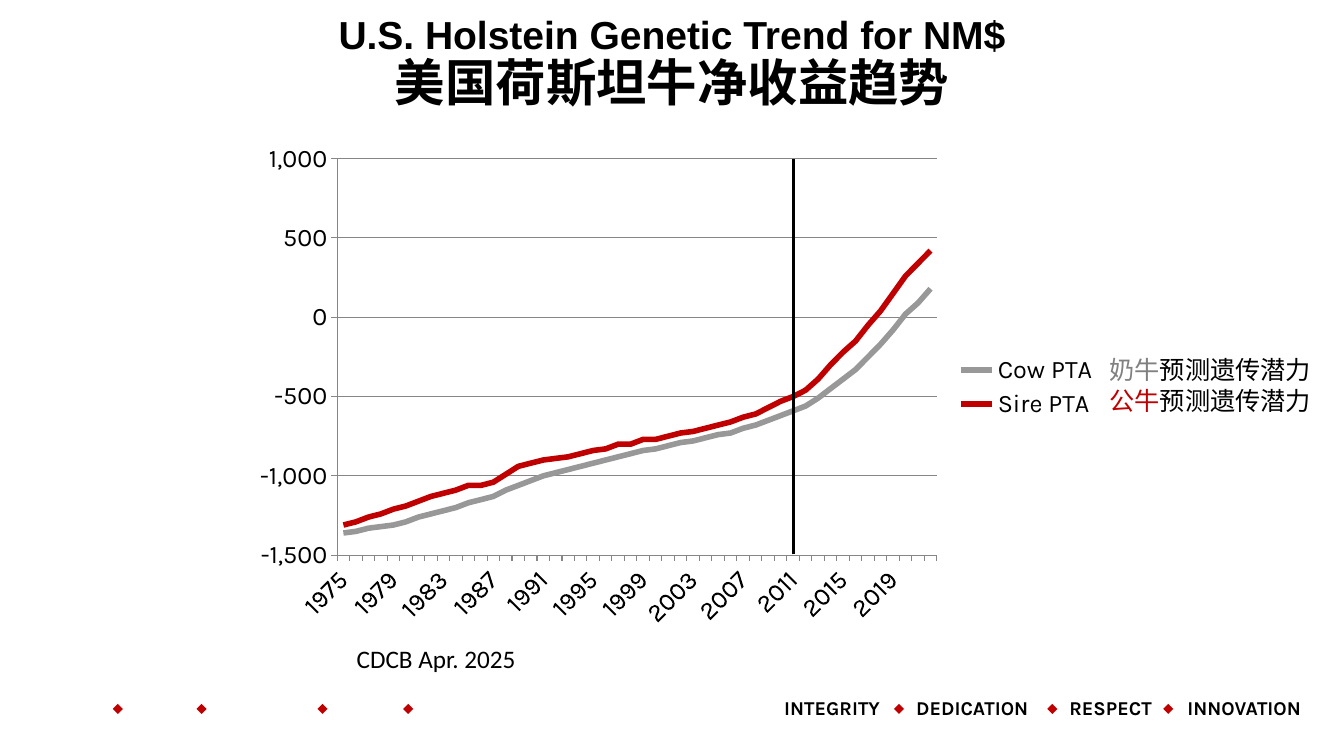
from lxml import etree
from pptx import Presentation
from pptx.chart.data import CategoryChartData
from pptx.dml.color import RGBColor
from pptx.enum.chart import XL_AXIS_CROSSES, XL_CHART_TYPE, XL_LEGEND_POSITION, XL_TICK_MARK
from pptx.enum.shapes import MSO_CONNECTOR, MSO_SHAPE
from pptx.enum.text import MSO_ANCHOR, PP_ALIGN
from pptx.oxml import parse_xml
from pptx.oxml.ns import nsdecls, qn
from pptx.util import Pt

DIAMOND = MSO_SHAPE.DIAMOND
STRAIGHT = MSO_CONNECTOR.STRAIGHT
LINE_CHART = XL_CHART_TYPE.LINE
LEGEND_RIGHT = XL_LEGEND_POSITION.RIGHT
TICK_OUTSIDE = XL_TICK_MARK.OUTSIDE
CROSS_AT_MINIMUM = XL_AXIS_CROSSES.MINIMUM
TOP, BOTTOM = MSO_ANCHOR.TOP, MSO_ANCHOR.BOTTOM
LEFT, CENTER = PP_ALIGN.LEFT, PP_ALIGN.CENTER

BLACK, RED, GRAY, COW_GRAY, GRID_GRAY = "000000", "C00000", "808080", "989898", "868686"

FIRST_YEAR = 1975
COW_PTA = [
    -1360, -1350, -1330, -1320, -1310, -1290, -1260, -1240, -1220, -1200, -1170, -1150,
    -1130, -1090, -1060, -1030, -1000, -980, -960, -940, -920, -900, -880, -860,
    -840, -830, -810, -790, -780, -760, -740, -730, -700, -680, -650, -620,
    -590, -560, -510, -450, -390, -330, -250, -170, -80, 20, 90, 180,
]
SIRE_PTA = [
    -1310, -1290, -1260, -1240, -1210, -1190, -1160, -1130, -1110, -1090, -1060, -1060,
    -1040, -990, -940, -920, -900, -890, -880, -860, -840, -830, -800, -800,
    -770, -770, -750, -730, -720, -700, -680, -660, -630, -610, -570, -530,
    -500, -460, -390, -300, -220, -150, -50, 40, 150, 260, 340, 420,
]
SERIES = [("Cow PTA", COW_PTA, COW_GRAY), ("Sire PTA", SIRE_PTA, RED)]
PLOT_LAYOUT = {"x": 0.089, "y": 0.045, "w": 0.708, "h": 0.79}


def rgb(color):
    """Turn a hex string into a colour."""
    return RGBColor.from_string(color)


def style_font(font, size, name, color=BLACK, bold=False):
    """Set the size, typeface, colour and weight of a font."""
    font.size, font.name, font.bold = Pt(size), name, bold
    font.color.rgb = rgb(color)


def style_line(line, color, width):
    """Set the colour and width of a line."""
    line.color.rgb = rgb(color)
    line.width = Pt(width)


def add_text(slide, box, text, size, name, bold=False, anchor=TOP, align=LEFT,
             spacing=1.0, wrap=True):
    """Place a one-paragraph text box and return its paragraph."""
    frame = slide.shapes.add_textbox(*map(Pt, box)).text_frame
    frame.word_wrap = wrap
    frame.vertical_anchor = anchor
    paragraph = frame.paragraphs[0]
    paragraph.text = text
    paragraph.alignment = align
    paragraph.line_spacing = spacing
    style_font(paragraph.font, size, name, bold=bold)
    return paragraph


def add_title(slide, box):
    """Place the two-language title."""
    title = add_text(slide, box, "U.S. Holstein Genetic Trend for NM$", 36, "Arial",
                     bold=True, anchor=BOTTOM, align=CENTER, spacing=0.9)
    title.runs[0].font.size = Pt(27.9)
    title.add_line_break()
    title.add_run().text = "美国荷斯坦牛净收益趋势"


def add_footer(slide, box):
    """Place the row of values with their diamonds."""
    left, top, width, height = box
    for value, offset in (("INTEGRITY", 553), ("DEDICATION", 647.3),
                          ("RESPECT", 756.7), ("INNOVATION", 841)):
        add_text(slide, (left + offset, top, 110, height), value, 14, "Karla",
                 bold=True, anchor=BOTTOM, spacing=0.9)
    for offset in (80.6, 140.4, 226.8, 288, 638.6, 748.1, 830.9):
        diamond = slide.shapes.add_shape(DIAMOND, Pt(left + offset), Pt(top + 6.8),
                                         Pt(7.2), Pt(7.2))
        diamond.shadow.inherit = False
        diamond.fill.solid()
        diamond.fill.fore_color.rgb = rgb(RED)
        diamond.line.fill.background()


def fix_plot_area(chart):
    """Pin the inner plot area and slant the year labels."""
    plot_area = chart.element.find(".//" + qn("c:plotArea"))
    for old_layout in plot_area.findall(qn("c:layout")):
        plot_area.remove(old_layout)
    layout = etree.Element(qn("c:layout"))
    manual = etree.SubElement(layout, qn("c:manualLayout"))
    settings = {"layoutTarget": "inner", "xMode": "edge", "yMode": "edge", **PLOT_LAYOUT}
    for tag, value in settings.items():
        etree.SubElement(manual, qn("c:" + tag)).set("val", str(value))
    plot_area.insert(0, layout)

    years = plot_area.find(qn("c:catAx"))
    years.find(qn("c:txPr")).find(qn("a:bodyPr")).set("rot", "-2700000")
    label_skip = parse_xml(f'<c:tickLblSkip {nsdecls("c")} val="4"/>')
    years.find(qn("c:noMultiLvlLbl")).addprevious(label_skip)


def add_trend_chart(slide, box):
    """Place the line chart of cow and sire trends."""
    trend = CategoryChartData(number_format="#,##0")
    trend.categories = [str(FIRST_YEAR + i) for i in range(len(COW_PTA))]
    for name, values, _ in SERIES:
        trend.add_series(name, values)
    chart = slide.shapes.add_chart(LINE_CHART, *map(Pt, box), trend).chart
    chart.has_title = False
    style_font(chart.font, 18, "Karla")
    chart.has_legend = True
    chart.legend.position = LEGEND_RIGHT
    chart.legend.include_in_layout = False
    chart.plots[0].vary_by_categories = False
    for series, (_, _, color) in zip(chart.plots[0].series, SERIES):
        series.smooth = False
        style_line(series.format.line, color, 4)

    years, dollars = chart.category_axis, chart.value_axis
    for axis in (years, dollars):
        axis.major_tick_mark = TICK_OUTSIDE
        style_line(axis.format.line, GRID_GRAY, 0.75)
        style_font(axis.tick_labels.font, 18, "Karla")
    dollars.minimum_scale, dollars.maximum_scale, dollars.major_unit = -1500, 1000, 500
    dollars.crosses = CROSS_AT_MINIMUM
    dollars.tick_labels.number_format = "#,##0"
    dollars.tick_labels.number_format_is_linked = False
    style_line(dollars.major_gridlines.format.line, GRID_GRAY, 0.75)
    fix_plot_area(chart)


def add_year_marker(slide, box):
    """Draw the upright line at 2011."""
    left, top, width, height = box
    marker = slide.shapes.add_connector(STRAIGHT, Pt(left), Pt(top + height),
                                        Pt(left + width), Pt(top))
    style_line(marker.line, BLACK, 2)
    etree.SubElement(marker.element.spPr, qn("a:effectLst"))


def add_legend_translation(slide, box):
    """Place the Chinese wording beside the legend."""
    frame = slide.shapes.add_textbox(*map(Pt, box)).text_frame
    frame.word_wrap = True
    for i, (animal, color) in enumerate((("奶牛", GRAY), ("公牛", RED))):
        entry = frame.add_paragraph() if i else frame.paragraphs[0]
        style_font(entry.font, 18, "Arial")
        for wording, shade in ((animal, color), ("预测遗传潜力", BLACK)):
            run = entry.add_run()
            run.text = wording
            style_font(run.font, 18, "Arial", shade)


def main():
    """Build the slide and save it."""
    deck = Presentation()
    deck.slide_width, deck.slide_height = Pt(960), Pt(540)
    slide = deck.slides.add_slide(deck.slide_layouts[6])
    add_footer(slide, (0, 496, 960, 21.6))
    add_title(slide, (0, 16.5, 960, 67.7))
    add_text(slide, (247.7, 455.8, 129.6, 28.8), "CDCB Apr. 2025", 18, "Calibri", wrap=False)
    add_trend_chart(slide, (185.8, 97.2, 606.2, 358.6))
    add_year_marker(slide, (566.6, 113.8, 0, 282.2))
    add_legend_translation(slide, (785.5, 249.8, 175.7, 51.1))
    deck.save("out.pptx")


if __name__ == "__main__":
    main()
